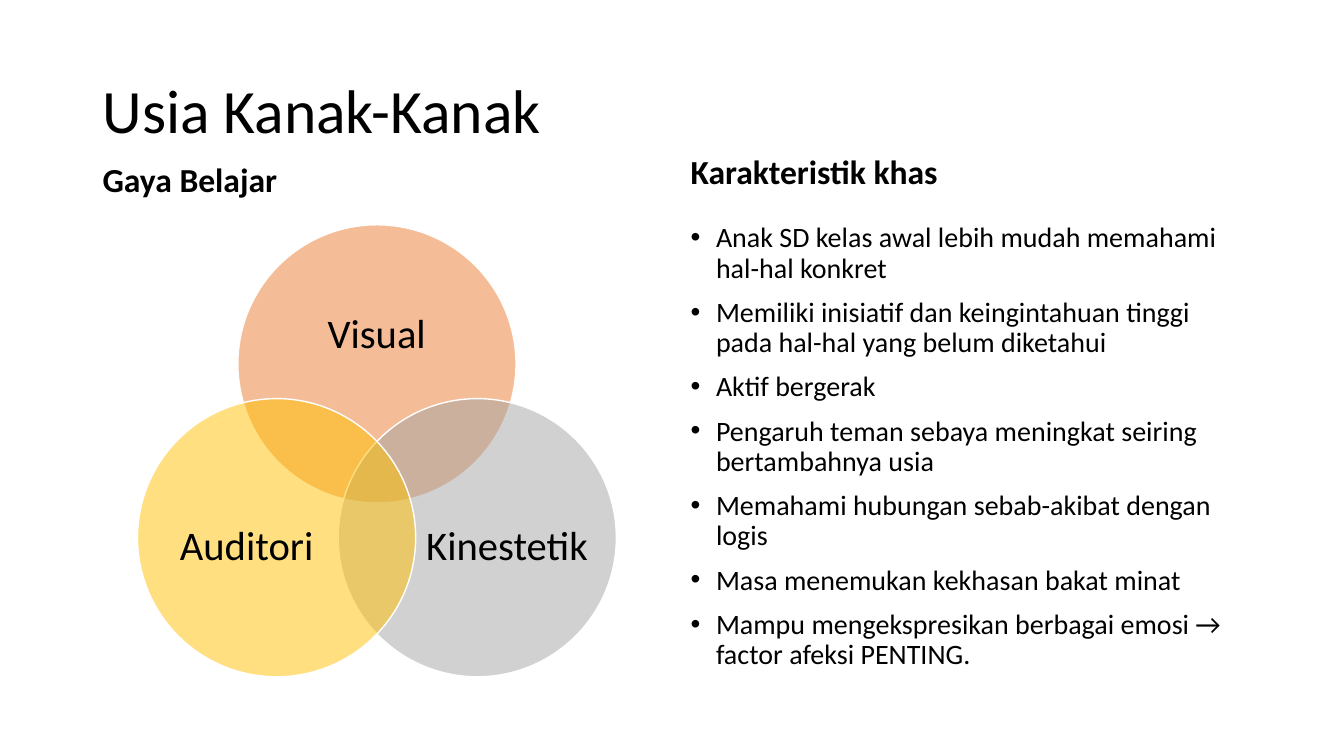
from dataclasses import dataclass
from math import cos, radians, sin

from lxml.etree import SubElement
from pptx import Presentation
from pptx.dml.color import RGBColor
from pptx.enum.shapes import MSO_SHAPE as ShapeKind
from pptx.enum.text import MSO_ANCHOR as Anchor, MSO_AUTO_SIZE as AutoSize, PP_ALIGN as Align
from pptx.oxml.ns import qn
from pptx.util import Cm, Pt


@dataclass(frozen=True)
class Theme:
    font: str = "Calibri"
    text: str = "000000"
    outline: str = "FFFFFF"
    orange: str = "ED7D31"
    gray: str = "A5A5A5"
    yellow: str = "FFC000"
    title_size: int = 44
    heading_size: int = 24
    list_size: int = 20
    circle_size: int = 29
    line_spacing: float = 0.9
    opacity: int = 50


@dataclass(frozen=True)
class Box:
    left: float
    top: float
    width: float
    height: float


@dataclass(frozen=True)
class TextBlock:
    placeholder: int
    box: Box
    lines: tuple[str, ...]
    size: int
    anchor: Anchor
    space_before: int = 10
    bold: bool = False
    bulleted: bool = False


@dataclass(frozen=True)
class LearningStyle:
    label: str
    color: str
    angle: int
    label_box: Box


THEME = Theme()
VENN_CENTER_X, VENN_CENTER_Y = 9.5, 12.09
VENN_SPREAD = 2.92
CIRCLE_DIAMETER = 7.01
BULLET_INDENT = Cm(0.64)

TEXT_BLOCKS = (
    TextBlock(0, Box(2.33, 1.01, 29.21, 3.68), ("Usia Kanak-Kanak",),
              THEME.title_size, Anchor.MIDDLE, space_before=0),
    TextBlock(1, Box(2.33, 3.56, 14.33, 1.6), ("Gaya Belajar",),
              THEME.heading_size, Anchor.BOTTOM, bold=True),
    TextBlock(3, Box(17.15, 3.56, 14.4, 1.4), ("Karakteristik khas",),
              THEME.heading_size, Anchor.BOTTOM, bold=True),
    TextBlock(4, Box(17.15, 5.51, 14.4, 11.68), (
        "Anak SD kelas awal lebih mudah memahami hal-hal konkret",
        "Memiliki inisiatif dan keingintahuan tinggi pada hal-hal yang belum diketahui",
        "Aktif bergerak",
        "Pengaruh teman sebaya meningkat seiring bertambahnya usia",
        "Memahami hubungan sebab-akibat dengan logis",
        "Masa menemukan kekhasan bakat minat",
        "Mampu mengekspresikan berbagai emosi → factor afeksi PENTING.",
    ), THEME.list_size, Anchor.TOP, bulleted=True),
)

LEARNING_STYLES = (
    LearningStyle("Visual", THEME.orange, -90, Box(6.93, 6.88, 5.13, 3.15)),
    LearningStyle("Kinestetik", THEME.gray, 30, Box(10.67, 11.86, 4.22, 3.86)),
    LearningStyle("Auditori", THEME.yellow, 150, Box(4.11, 11.86, 4.22, 3.86)),
)


def lengths(box: Box) -> tuple[Cm, Cm, Cm, Cm]:
    return Cm(box.left), Cm(box.top), Cm(box.width), Cm(box.height)


def format_paragraph(paragraph, size: int, align: Align, bold: bool = False) -> None:
    paragraph.alignment = align
    paragraph.line_spacing = THEME.line_spacing
    font = paragraph.font
    font.name = THEME.font
    font.size = Pt(size)
    font.bold = bold
    font.color.rgb = RGBColor.from_string(THEME.text)


def fill_placeholder(slide, block: TextBlock) -> None:
    shape = next(item for item in slide.placeholders
                 if item.placeholder_format.idx == block.placeholder)
    shape.left, shape.top, shape.width, shape.height = lengths(block.box)
    frame = shape.text_frame
    frame.text = "\n".join(block.lines)
    frame.word_wrap = True
    frame.auto_size = AutoSize.NONE
    frame.vertical_anchor = block.anchor
    for paragraph in frame.paragraphs:
        format_paragraph(paragraph, block.size, Align.LEFT, block.bold)
        paragraph.space_before = Pt(block.space_before)
        if block.bulleted:
            properties = paragraph._p.get_or_add_pPr()
            properties.set("marL", str(BULLET_INDENT))
            properties.set("indent", str(-BULLET_INDENT))


def draw_learning_style(slide, style: LearningStyle) -> None:
    angle = radians(style.angle)
    radius = CIRCLE_DIAMETER / 2
    circle_box = Box(VENN_CENTER_X + VENN_SPREAD * cos(angle) - radius,
                     VENN_CENTER_Y + VENN_SPREAD * sin(angle) - radius,
                     CIRCLE_DIAMETER, CIRCLE_DIAMETER)
    circle = slide.shapes.add_shape(ShapeKind.OVAL, *lengths(circle_box))
    circle.shadow.inherit = False
    circle.fill.solid()
    circle.fill.fore_color.rgb = RGBColor.from_string(style.color)
    fill_color = next(circle.element.spPr.iter(qn("a:srgbClr")))
    SubElement(fill_color, qn("a:alpha"), val=str(THEME.opacity * 1000))
    circle.line.color.rgb = RGBColor.from_string(THEME.outline)
    circle.line.width = Pt(1)

    frame = slide.shapes.add_textbox(*lengths(style.label_box)).text_frame
    frame.word_wrap = True
    frame.vertical_anchor = Anchor.MIDDLE
    frame.margin_left = frame.margin_right = frame.margin_top = frame.margin_bottom = 0
    paragraph = frame.paragraphs[0]
    paragraph.text = style.label
    format_paragraph(paragraph, THEME.circle_size, Align.CENTER)
    paragraph.space_after = Pt(10)


def main() -> None:
    presentation = Presentation()
    presentation.slide_width = Cm(33.87)
    presentation.slide_height = Cm(19.05)
    comparison = presentation.slide_layouts.get_by_name("Comparison")
    slide = presentation.slides.add_slide(comparison)
    for block in TEXT_BLOCKS:
        fill_placeholder(slide, block)
    used = {block.placeholder for block in TEXT_BLOCKS}
    for placeholder in list(slide.placeholders):
        if placeholder.placeholder_format.idx not in used:
            placeholder.element.getparent().remove(placeholder.element)
    for style in LEARNING_STYLES:
        draw_learning_style(slide, style)
    presentation.save("out.pptx")


if __name__ == "__main__":
    main()
